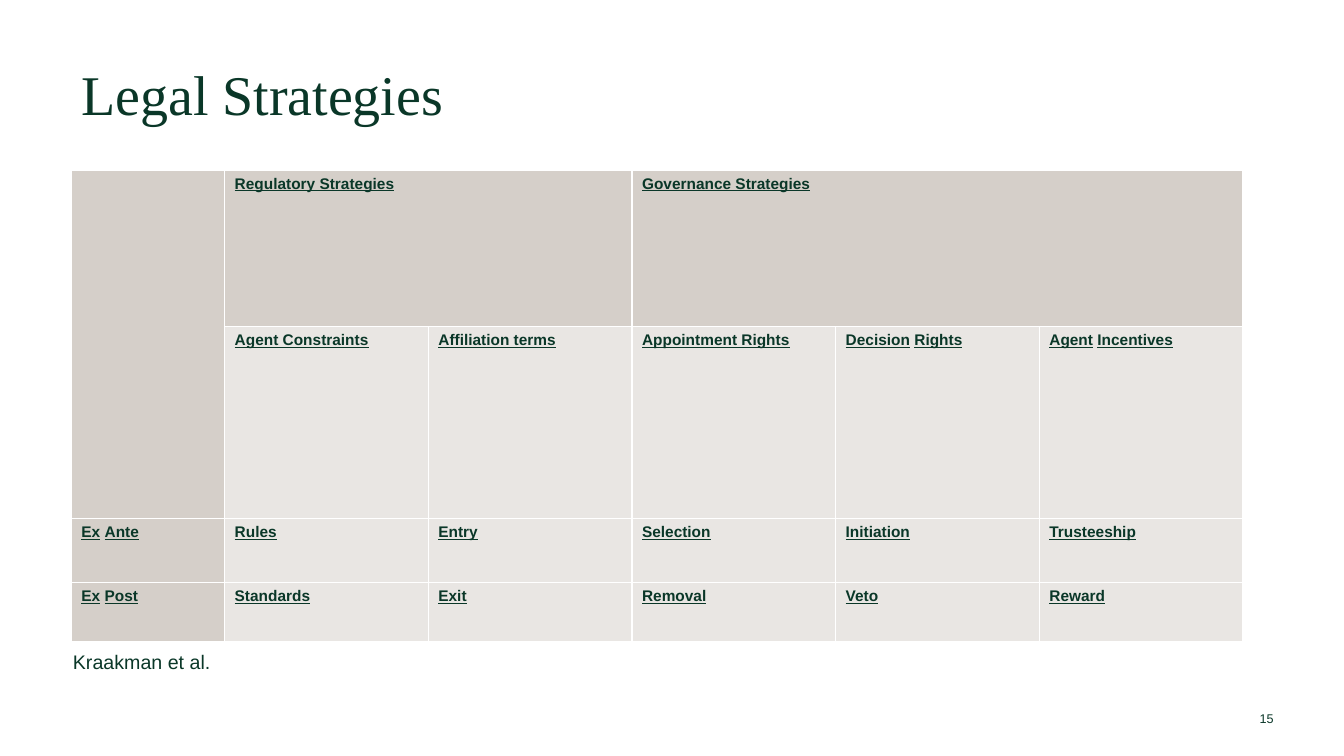
"""Build the Legal Strategies slide with its table of strategies."""
from dataclasses import dataclass

from lxml.etree import SubElement
from pptx import Presentation
from pptx.dml.color import RGBColor
from pptx.enum.text import MSO_ANCHOR, PP_ALIGN
from pptx.oxml.ns import qn
from pptx.util import Pt

EMU_PER_PX = 9525


@dataclass(frozen=True)
class Theme:
    ink: str = "0A3728"
    heading_fill: str = "D5CFC9"
    body_fill: str = "E9E6E3"
    border: str = "FFFFFF"
    heading_font: str = "Times New Roman"
    body_font: str = "Arial"
    title_size: int = 40
    source_size: int = 14
    table_size: int = 11
    number_size: int = 9


THEME = Theme()
COLUMN_WIDTHS = [146] + [194] * 5
ROW_HEIGHTS = [149, 183, 61, 56]
STRATEGIES = [
    ["", "Regulatory Strategies", "", "Governance Strategies", "", ""],
    ["", "Agent Constraints", "Affiliation terms", "Appointment Rights",
     "Decision|Rights", "Agent|Incentives"],
    ["Ex|Ante", "Rules", "Entry", "Selection", "Initiation", "Trusteeship"],
    ["Ex|Post", "Standards", "Exit", "Removal", "Veto", "Reward"],
]
MERGES = [((0, 0), (1, 0)), ((0, 1), (0, 2)), ((0, 3), (0, 5))]


def px(length):
    return length * EMU_PER_PX


def style_font(font, size, name=THEME.body_font):
    font.size = Pt(size)
    font.name = name
    font.color.rgb = RGBColor.from_string(THEME.ink)


def add_text(slide, text, box, size, name=THEME.body_font):
    frame = slide.shapes.add_textbox(*map(px, box)).text_frame
    frame.word_wrap = True
    line = frame.paragraphs[0]
    line.text = text
    style_font(line.font, size, name)
    return frame


def add_borders(cell):
    properties = cell._tc.get_or_add_tcPr()
    for position, side in enumerate(("a:lnL", "a:lnR", "a:lnT", "a:lnB")):
        edge = properties.makeelement(qn(side), {"w": str(Pt(1))})
        fill = SubElement(edge, qn("a:solidFill"))
        SubElement(fill, qn("a:srgbClr"), val=THEME.border)
        properties.insert(position, edge)


def write_label(cell, label):
    """Write a bold underlined label; a bar marks a plain space between words."""
    line = cell.text_frame.paragraphs[0]
    style_font(line.font, THEME.table_size)
    line.font.bold = line.font.underline = True
    for position, words in enumerate(label.split("|")):
        if position:
            gap = line.add_run()
            gap.text = " "
            gap.font.bold = gap.font.underline = False
        line.add_run().text = words


def add_strategy_table(slide, left, top):
    table = slide.shapes.add_table(
        len(ROW_HEIGHTS), len(COLUMN_WIDTHS), px(left), px(top),
        px(sum(COLUMN_WIDTHS)), px(sum(ROW_HEIGHTS))).table
    table.first_row = table.horz_banding = False
    for column, width in zip(table.columns, COLUMN_WIDTHS):
        column.width = px(width)
    for row, height in zip(table.rows, ROW_HEIGHTS):
        row.height = px(height)
    for row, labels in enumerate(STRATEGIES):
        for column, label in enumerate(labels):
            cell = table.cell(row, column)
            is_heading = row == 0 or column == 0
            cell.fill.solid()
            cell.fill.fore_color.rgb = RGBColor.from_string(
                THEME.heading_fill if is_heading else THEME.body_fill)
            add_borders(cell)
            if label:
                write_label(cell, label)
    for first, last in MERGES:
        table.cell(*first).merge(table.cell(*last))


def add_slide_number(slide, number, box):
    frame = add_text(slide, number, box, THEME.number_size)
    frame.margin_left = frame.margin_right = 0
    frame.margin_top = frame.margin_bottom = 0
    frame.vertical_anchor = MSO_ANCHOR.MIDDLE
    frame.paragraphs[0].alignment = PP_ALIGN.RIGHT


def main():
    deck = Presentation()
    deck.slide_width, deck.slide_height = px(1280), px(720)
    slide = deck.slides.add_slide(deck.slide_layouts[6])
    title = add_text(slide, "Legal Strategies", (68, 59, 1144, 84),
                     THEME.title_size, THEME.heading_font)
    title.paragraphs[0].line_spacing = 0.9
    add_strategy_table(slide, 68, 162)
    add_text(slide, "Kraakman et al.", (60, 614, 222, 33), THEME.source_size)
    add_slide_number(slide, "15", (1158, 673, 55, 22))
    deck.save("out.pptx")


if __name__ == "__main__":
    main()
